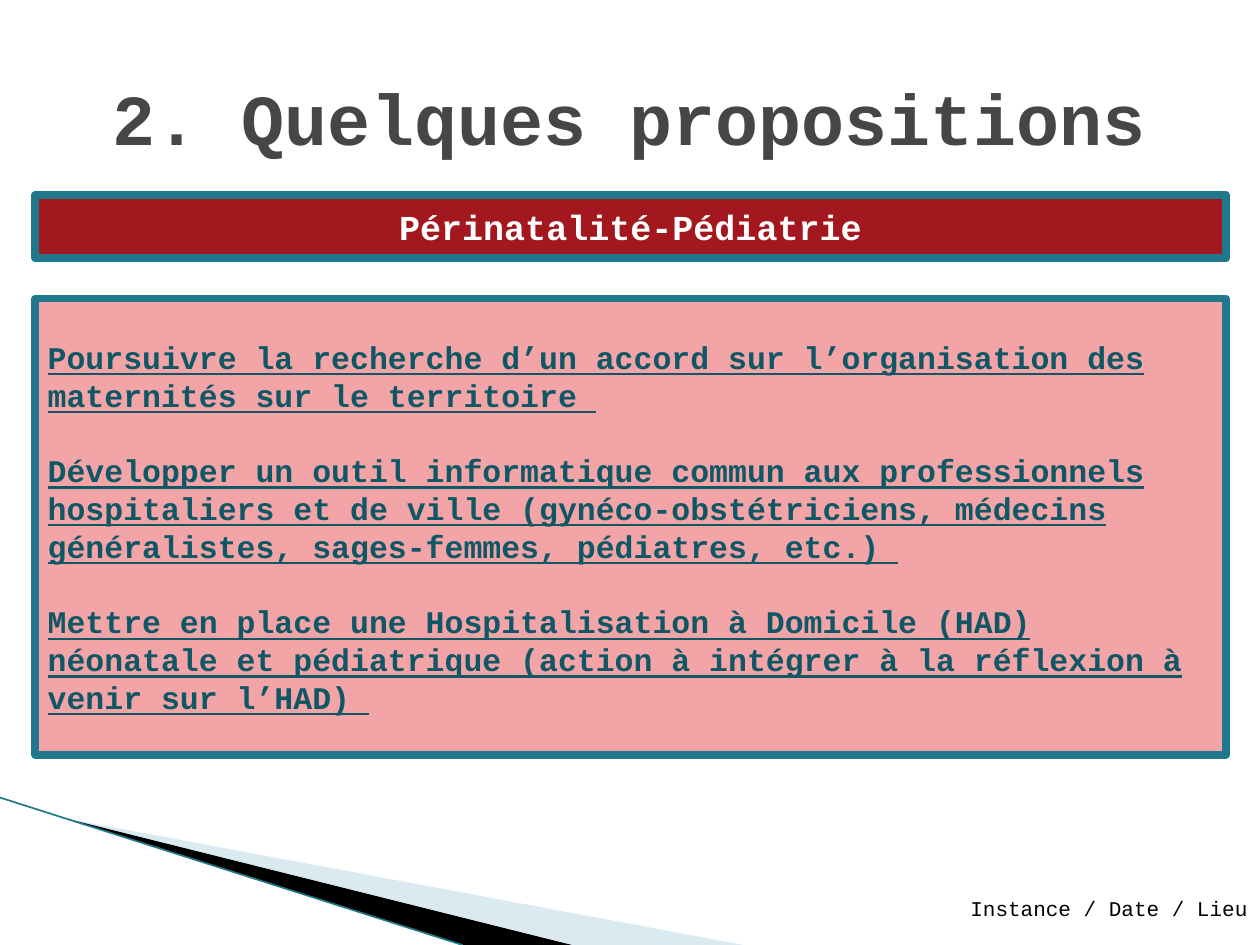
from lxml.etree import SubElement
from pptx import Presentation
from pptx.dml.color import RGBColor
from pptx.enum.shapes import MSO_CONNECTOR as Connector, MSO_SHAPE as Shape
from pptx.enum.text import MSO_ANCHOR as Anchor, PP_ALIGN as Align
from pptx.oxml.ns import qn
from pptx.util import Inches, Pt

FONT = "Courier New"
TEAL = "21788D"
PROPOSALS = [
    "Poursuivre la recherche d’un accord sur l’organisation des maternités sur le territoire ",
    "Développer un outil informatique commun aux professionnels hospitaliers et de ville "
    "(gynéco-obstétriciens, médecins généralistes, sages-femmes, pédiatres, etc.) ",
    "Mettre en place une Hospitalisation à Domicile (HAD) néonatale et pédiatrique "
    "(action à intégrer à la réflexion à venir sur l’HAD) ",
]


def rgb(value):
    return RGBColor.from_string(value)


def write(shape, texts, color, align, anchor=Anchor.MIDDLE, spacing=None, **font_format):
    """Fill a shape with one paragraph per text, all in the same format."""
    frame = shape.text_frame
    frame.word_wrap = True
    frame.vertical_anchor = anchor
    for index, text in enumerate(texts):
        paragraph = frame.add_paragraph() if index else frame.paragraphs[0]
        paragraph.alignment = align
        if spacing:
            paragraph.line_spacing = spacing
            paragraph.space_before = spacing if index else Pt(0)
        run = paragraph.add_run()
        run.text = text
        run.font.color.rgb = rgb(color)
        for name, value in {"name": FONT, **font_format}.items():
            setattr(run.font, name, value)


def add_wedge(slide, points, color, opacity=100):
    corners = [(Inches(x), Inches(y)) for x, y in points]
    builder = slide.shapes.build_freeform(*corners[0])
    builder.add_line_segments(corners[1:], close=True)
    wedge = builder.convert_to_shape()
    wedge.shadow.inherit = False
    wedge.line.fill.background()
    wedge.fill.solid()
    wedge.fill.fore_color.rgb = rgb(color)
    if opacity < 100:
        color_element = wedge.fill._xPr.find(f"{qn('a:solidFill')}/{qn('a:srgbClr')}")
        SubElement(color_element, qn("a:alpha"), val=str(opacity * 1000))


def add_corner_decoration(slide, left, top, width, height):
    """Draw two wedges and a line that run down from the left edge."""
    right, bottom = left + width, top + height
    tip = (left + 0.54, top + 0.17)
    add_wedge(slide, [tip, (right, bottom), (left + 4.56, bottom)], "A0CBDC", 40)
    add_wedge(slide, [tip, (left + 4.54, bottom), (left + 3.68, bottom)], "000000")
    line = slide.shapes.add_connector(
        Connector.STRAIGHT, Inches(left), Inches(top), Inches(left + 3.67), Inches(bottom))
    line.line.color.rgb = rgb(TEAL)
    line.line.width = Pt(0.95)
    SubElement(line._element.spPr, qn("a:effectLst"))


def add_title(slide, box, text):
    title = slide.shapes.title
    title.left, title.top, title.width, title.height = map(Inches, box)
    write(title, [text], "464646", Align.CENTER, size=Pt(41), bold=True)


def add_footer(slide, box, text):
    footer = slide.shapes.add_textbox(*map(Inches, box))
    write(footer, [text], "000000", Align.RIGHT, Anchor.TOP, size=Pt(12))


def add_panel(slide, box, fill):
    panel = slide.shapes.add_shape(Shape.RECTANGLE, *map(Inches, box))
    panel.shadow.inherit = False
    panel.fill.solid()
    panel.fill.fore_color.rgb = rgb(fill)
    panel.line.color.rgb = rgb(TEAL)
    panel.line.width = Pt(4.33)
    return panel


def add_topic(slide, left, top, width, heading, proposals):
    """Stack a heading band and the panel of its proposals."""
    band = add_panel(slide, (left, top, width, 0.5), "A3171E")
    write(band, [heading], "FFFFFF", Align.CENTER, size=Pt(20), bold=True)
    panel = add_panel(slide, (left, top + 0.82, width, 3.62), "F2A4A7")
    write(panel, proposals, "105766", Align.LEFT, spacing=Pt(21.6),
          size=Pt(18), bold=True, underline=True)


def main():
    presentation = Presentation()
    presentation.slide_width, presentation.slide_height = Inches(10), Inches(7.5)
    slide = presentation.slides.add_slide(presentation.slide_layouts[5])
    add_corner_decoration(slide, 0, 6.33, 5.9, 1.17)
    add_title(slide, (0.5, 0.3, 9, 1.25), "2. Quelques propositions")
    add_footer(slide, (5.04, 7.06, 4.96, 0.3), "Instance / Date / Lieu")
    add_topic(slide, 0.28, 1.55, 9.45, "Périnatalité-Pédiatrie", PROPOSALS)
    presentation.save("out.pptx")


if __name__ == "__main__":
    main()
